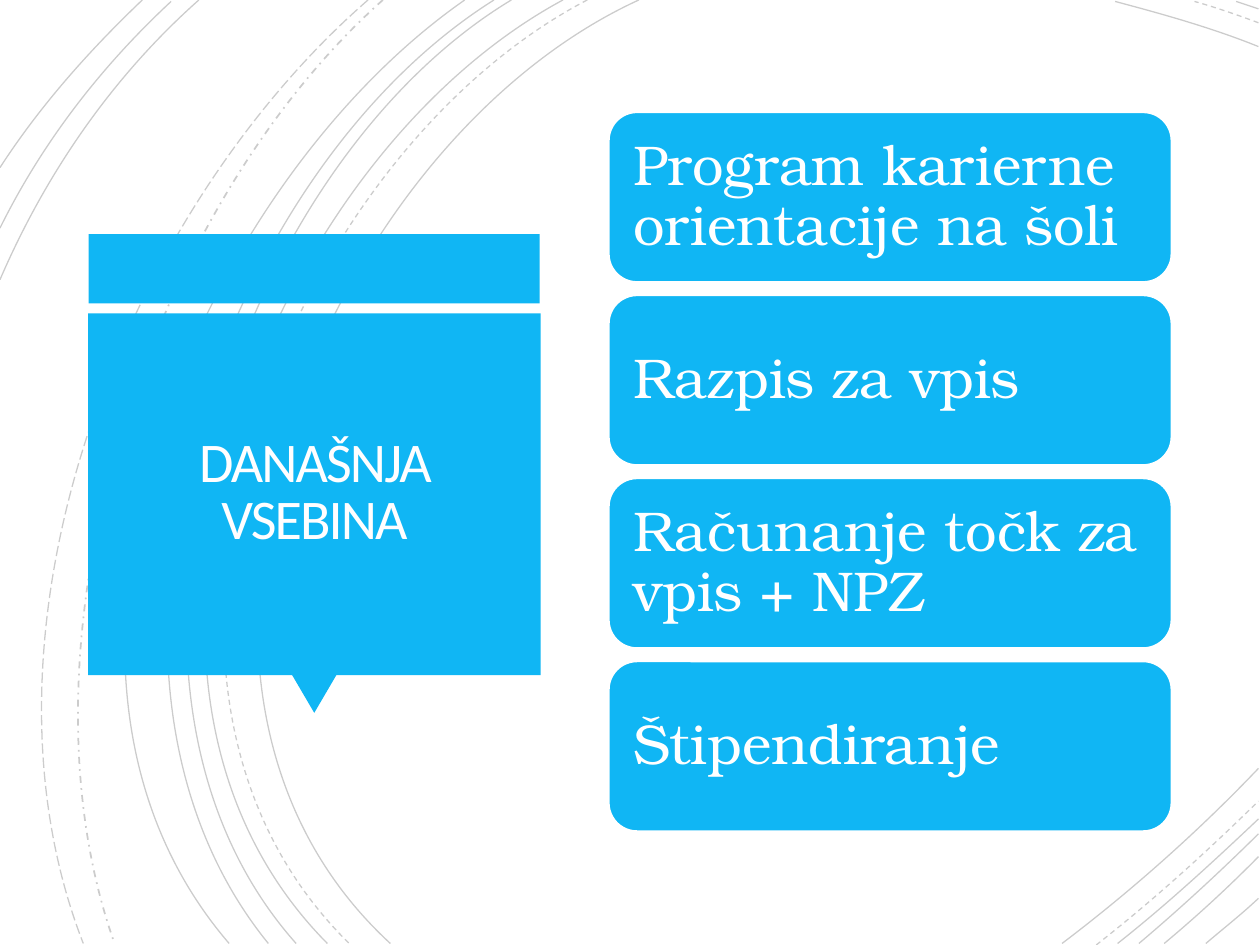
from lxml import etree
from pptx import Presentation
from pptx import util as u
from pptx.dml.color import RGBColor
from pptx.enum import dml, shapes, text
from pptx.oxml.ns import qn

BLUE = "10B6F4"
SOLID = dml.MSO_LINE.SOLID
DASH = dml.MSO_LINE.DASH
LONG_DASH = dml.MSO_LINE.LONG_DASH
DASH_DOT = dml.MSO_LINE.DASH_DOT

TOPICS = [
    "Program karierne orientacije na šoli",
    "Razpis za vpis",
    "Računanje točk za vpis + NPZ",
    "Štipendiranje",
]

ARCS = [
    (SOLID, (12.88, 0), (6.5, 2.92), (2.11, 13.72), (7.87, 19.02)),
    (SOLID, (25.37, 0.94), (24.43, 0.56), (23.42, 0.28), (22.48, 0.03)),
    (SOLID, (21.41, 19.02), (22.81, 17.96), (24.16, 16.76), (25.37, 15.49)),
    (DASH, (11.84, 0), (5.74, 3.18), (1.6, 13.67), (7.04, 19.02)),
    (DASH, (25.37, 0.46), (24.94, 0.3), (24.51, 0.15), (24.08, 0.03)),
    (DASH, (22.1, 19.05), (23.24, 18.16), (24.33, 17.17), (25.37, 16.15)),
    (SOLID, (11.35, 0), (5.36, 3.23), (1.27, 13.64), (6.6, 19.02)),
    (SOLID, (25.37, 0.18), (25.22, 0.13), (25.07, 0.08), (24.92, 0.03)),
    (SOLID, (22.53, 19.02), (23.52, 18.24), (24.46, 17.37), (25.37, 16.51)),
    (SOLID, (10.31, 0), (4.7, 3.38), (1.27, 13.74), (5.97, 19.02)),
    (SOLID, (22.96, 19.02), (23.8, 18.31), (24.59, 17.58), (25.37, 16.81)),
    (SOLID, (9.96, 0), (4.37, 3.51), (0.97, 13.56), (5.41, 19.02)),
    (SOLID, (23.47, 19.02), (24.13, 18.47), (24.77, 17.88), (25.37, 17.27)),
    (SOLID, (9.37, 0), (4.01, 3.73), (-0.18, 13.44), (4.62, 19.02)),
    (SOLID, (24.31, 19.02), (24.66, 18.72), (25.02, 18.44), (25.37, 18.11)),
    (DASH_DOT, (7.72, 0), (2.97, 4.22), (0.15, 12.93), (2.31, 19.02)),
    (LONG_DASH, (7.42, 0), (2.49, 4.29), (-0.79, 12.67), (1.68, 19.02)),
    (SOLID, (4.01, 0), (2.24, 1.57), (0.91, 3.53), (0, 5.64)),
    (SOLID, (3.45, 0.03), (2.01, 1.37), (0.84, 2.9), (0, 4.6)),
    (SOLID, (2.87, 0), (1.8, 1.02), (0.81, 2.13), (0, 3.38)),
]


def color(value):
    return RGBColor.from_string(value)


def add_arc(slide, dash, start, *curve):
    start, *curve = [(u.Cm(x), u.Cm(y)) for x, y in (start, *curve)]
    builder = slide.shapes.build_freeform(*start)
    builder.add_line_segments(curve, close=False)
    arc = builder.convert_to_shape()
    arc.shadow.inherit = False
    arc.fill.background()
    arc.line.width = u.Pt(1 if dash == DASH_DOT else 0.75)
    arc.line.color.rgb = color("000000")
    arc.line.dash_style = dash
    ink = next(arc.line._ln.iter(qn("a:srgbClr")))
    etree.SubElement(ink, qn("a:alpha"), val="20000")

    segments = list(arc._element.iter(qn("a:lnTo")))
    outline = segments[0].getparent()
    bezier = etree.SubElement(outline, qn("a:cubicBezTo"))
    for segment in segments:
        bezier.append(segment[0])
        outline.remove(segment)


def add_block(slide, preset, left, top, width, height, outline=None):
    block = slide.shapes.add_shape(
        preset, u.Cm(left), u.Cm(top), u.Cm(width), u.Cm(height))
    block.shadow.inherit = False
    block.fill.solid()
    block.fill.fore_color.rgb = color(BLUE)
    if outline:
        block.line.color.rgb = color(outline)
        block.line.width = u.Pt(1.25)
    else:
        block.line.fill.background()
    return block


def write(block, words, *, font, ink, align, spacing, inset, tracking=None):
    frame = block.text_frame
    frame.word_wrap = True
    frame.vertical_anchor = text.MSO_ANCHOR.MIDDLE
    frame.margin_left = frame.margin_right = u.Cm(inset)
    frame.margin_top = frame.margin_bottom = u.Cm(inset)
    paragraph = frame.paragraphs[0]
    paragraph.alignment = align
    paragraph.line_spacing = spacing
    run = paragraph.add_run()
    run.text = words
    run.font.name = font
    run.font.size = u.Pt(32)
    run.font.color.rgb = color(ink)
    if tracking:
        run.font._element.set("spc", str(tracking))


def add_title(slide):
    preset = shapes.MSO_SHAPE
    add_block(slide, preset.RECTANGLE, 1.79, 4.72, 9.09, 1.4)
    pointer = add_block(slide, preset.ISOSCELES_TRIANGLE, 5.89, 13.61, 0.89, 0.76)
    pointer.rotation = 180
    panel = add_block(slide, preset.RECTANGLE, 1.78, 6.32, 9.12, 7.29)
    write(panel, "DANAŠNJA VSEBINA", font="Calibri", ink="FFFEFF",
          align=text.PP_ALIGN.CENTER, spacing=0.85, inset=0.86, tracking=-110)


def add_topics(slide):
    for row, topic in enumerate(TOPICS):
        card = add_block(slide, shapes.MSO_SHAPE.ROUNDED_RECTANGLE,
                         12.27, 2.26 + row * 3.69, 11.35, 3.43, outline="FFFFFF")
        write(card, topic, font="TeX Gyre Bonum", ink="FFFFFF",
              align=text.PP_ALIGN.LEFT, spacing=0.9, inset=0.33)


def main():
    deck = Presentation()
    deck.slide_width, deck.slide_height = u.Cm(25.4), u.Cm(19.05)
    slide = deck.slides.add_slide(deck.slide_layouts[6])
    for arc in ARCS:
        add_arc(slide, *arc)
    add_title(slide)
    add_topics(slide)
    deck.save("out.pptx")


if __name__ == "__main__":
    main()
